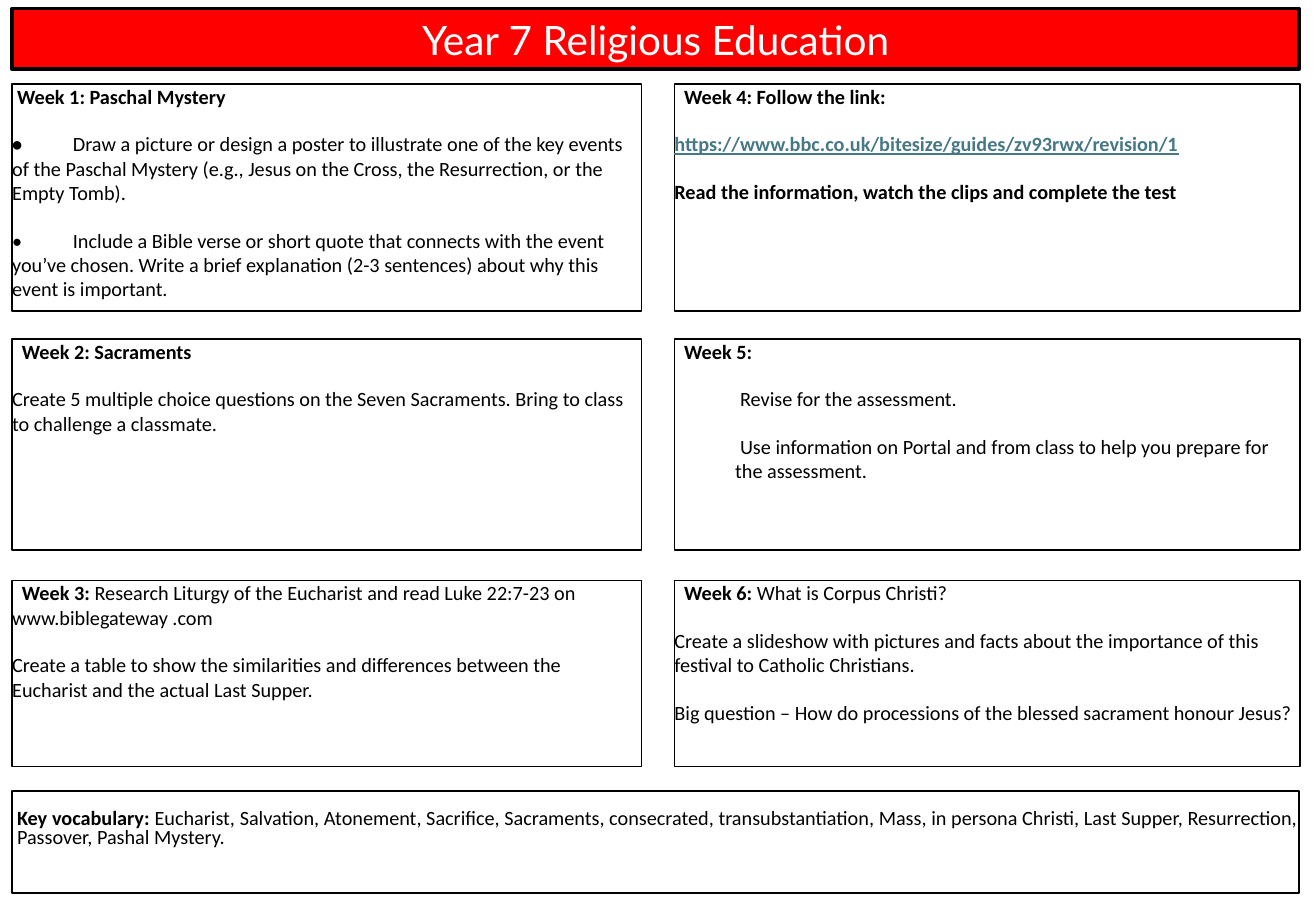
from dataclasses import dataclass
from typing import NamedTuple

from pptx import Presentation
from pptx.dml.color import RGBColor
from pptx.enum.shapes import MSO_SHAPE
from pptx.enum.text import MSO_ANCHOR, MSO_AUTO_SIZE, PP_ALIGN
from pptx.oxml import parse_xml
from pptx.oxml.ns import nsdecls
from pptx.util import Emu, Pt

RECTANGLE = MSO_SHAPE.RECTANGLE
TOP, MIDDLE = MSO_ANCHOR.TOP, MSO_ANCHOR.MIDDLE
LEFT, CENTER, JUSTIFY = PP_ALIGN.LEFT, PP_ALIGN.CENTER, PP_ALIGN.JUSTIFY
NO_AUTOFIT = MSO_AUTO_SIZE.NONE
TITLE_ONLY = 5
EMU_PER_PX = 9144


@dataclass(frozen=True)
class Theme:
    banner: RGBColor = RGBColor(0xFF, 0x00, 0x00)
    banner_text: RGBColor = RGBColor(0xFF, 0xFF, 0xFF)
    ink: RGBColor = RGBColor(0x00, 0x00, 0x00)
    link: RGBColor = RGBColor(0x46, 0x78, 0x86)
    title_font: str = "Lato"
    body_font: str = "Calibri"
    title_size: float = 24
    body_size: float = 12
    gap: float = 13.9
    vocabulary_leading: float = 11.5
    box_line: float = 1
    banner_line: float = 2.25


THEME = Theme()


class Box(NamedTuple):
    left: int
    top: int
    width: int
    height: int


class Span(NamedTuple):
    text: str
    bold: bool = False
    link: bool = False


class Line(NamedTuple):
    spans: tuple[Span, ...]
    margin: int = 0
    indent: int = 0
    tab: int = 28


class Task(NamedTuple):
    column: int
    row: int
    lines: tuple[Line, ...]


COLUMNS = ((10, 518), (555, 515))
ROWS = ((69, 187), (279, 174), (478, 153))
BANNER = Box(10, 7, 1059, 50)
VOCABULARY_BOX = Box(10, 651, 1059, 84)


def heading(label: str, rest: str = "", indent: int = 8) -> Line:
    spans = (Span(label, bold=True), Span(rest)) if rest else (Span(label, bold=True),)
    return Line(spans, indent=indent)


def plain(text: str) -> Line:
    return Line((Span(text),))


def bullet(text: str, bold_mark: bool = False) -> Line:
    return Line((Span("•\t", bold=bold_mark), Span(text)), tab=16)


def nested(text: str) -> Line:
    return Line((Span(text),), margin=50, indent=4)


TASKS = (
    Task(0, 0, (
        heading("Week 1: Paschal Mystery", indent=4),
        bullet("Draw a picture or design a poster to illustrate one of the key events of the "
               "Paschal Mystery (e.g., Jesus on the Cross, the Resurrection, or the Empty Tomb).",
               bold_mark=True),
        bullet("Include a Bible verse or short quote that connects with the event you’ve chosen. "
               "Write a brief explanation (2-3 sentences) about why this event is important."),
    )),
    Task(0, 1, (
        heading("Week 2: Sacraments"),
        plain("Create 5 multiple choice questions on the Seven Sacraments. "
              "Bring to class to challenge a classmate."),
    )),
    Task(0, 2, (
        heading("Week 3: ", "Research Liturgy of the Eucharist and read Luke 22:7-23 on "
                "www.biblegateway .com"),
        plain("Create a table to show the similarities and differences between the "
              "Eucharist and the actual Last Supper."),
    )),
    Task(1, 0, (
        heading("Week 4: Follow the link:"),
        Line((Span("https://www.bbc.co.uk/bitesize/guides/zv93rwx/revision/1",
                   bold=True, link=True),)),
        Line((Span("Read the information, watch the clips and complete the test", bold=True),)),
    )),
    Task(1, 1, (
        heading("Week 5:"),
        nested("Revise for the assessment."),
        nested("Use information on Portal and from class to help you prepare for the assessment."),
    )),
    Task(1, 2, (
        heading("Week 6: ", "What is Corpus Christi?"),
        plain("Create a slideshow with pictures and facts about the importance of this "
              "festival to Catholic Christians."),
        plain("Big question – How do processions of the blessed sacrament honour Jesus?"),
    )),
)

VOCABULARY = Line((
    Span("Key vocabulary: ", bold=True),
    Span("Eucharist, Salvation, Atonement, Sacrifice, Sacraments, consecrated, "
         "transubstantiation, Mass, in persona Christi, Last Supper, Resurrection, "
         "Passover, Pashal Mystery."),
), margin=4)


def px(length: int) -> Emu:
    return Emu(length * EMU_PER_PX)


def add_text(paragraph, text: str, *, font: str = THEME.body_font,
             size: float = THEME.body_size, color: RGBColor = THEME.ink,
             bold: bool = False, underline: bool = False) -> None:
    run = paragraph.add_run()
    run.text = text
    run.font.name = font
    run.font.size = Pt(size)
    run.font.color.rgb = color
    run.font.bold = bold
    run.font.underline = underline


def outline(shape, width: float) -> None:
    shape.line.color.rgb = THEME.ink
    shape.line.width = Pt(width)


def write_line(paragraph, line: Line, alignment: PP_ALIGN) -> None:
    properties = paragraph._p.get_or_add_pPr()
    properties.set("marL", str(px(line.margin)))
    properties.set("indent", str(px(line.indent)))
    properties.append(parse_xml(
        f'<a:tabLst {nsdecls("a")}><a:tab pos="{px(line.tab)}" algn="l"/></a:tabLst>'))
    paragraph.alignment = alignment
    for span in line.spans:
        add_text(paragraph, span.text, bold=span.bold, underline=span.link,
                 color=THEME.link if span.link else THEME.ink)


def add_box(slide, box: Box, lines: tuple[Line, ...], *, top_inset: int = 0,
            alignment: PP_ALIGN = LEFT, leading: float | None = None) -> None:
    shape = slide.shapes.add_shape(RECTANGLE, *map(px, box))
    shape.shadow.inherit = False
    shape.fill.background()
    outline(shape, THEME.box_line)
    frame = shape.text_frame
    frame.word_wrap = True
    frame.vertical_anchor = TOP
    frame.margin_left = frame.margin_right = frame.margin_bottom = 0
    frame.margin_top = px(top_inset)
    for index, line in enumerate(lines):
        paragraph = frame.add_paragraph() if index else frame.paragraphs[0]
        write_line(paragraph, line, alignment)
        if index:
            paragraph.space_before = Pt(THEME.gap)
        if leading:
            paragraph.line_spacing = Pt(leading)


def add_banner(slide, text: str) -> None:
    title = slide.shapes.title
    title.left, title.top, title.width, title.height = map(px, BANNER)
    title.fill.solid()
    title.fill.fore_color.rgb = THEME.banner
    outline(title, THEME.banner_line)
    frame = title.text_frame
    frame.auto_size = NO_AUTOFIT
    frame.vertical_anchor = MIDDLE
    paragraph = frame.paragraphs[0]
    paragraph.alignment = CENTER
    add_text(paragraph, text, font=THEME.title_font, size=THEME.title_size,
             color=THEME.banner_text)


def main() -> None:
    presentation = Presentation()
    presentation.slide_width = px(1083)
    presentation.slide_height = px(750)
    slide = presentation.slides.add_slide(presentation.slide_layouts[TITLE_ONLY])
    add_banner(slide, "Year 7 Religious Education")
    for task in TASKS:
        left, width = COLUMNS[task.column]
        top, height = ROWS[task.row]
        add_box(slide, Box(left, top, width, height), task.lines)
    add_box(slide, VOCABULARY_BOX, (VOCABULARY,), top_inset=16,
            alignment=JUSTIFY, leading=THEME.vocabulary_leading)
    presentation.save("out.pptx")


if __name__ == "__main__":
    main()
